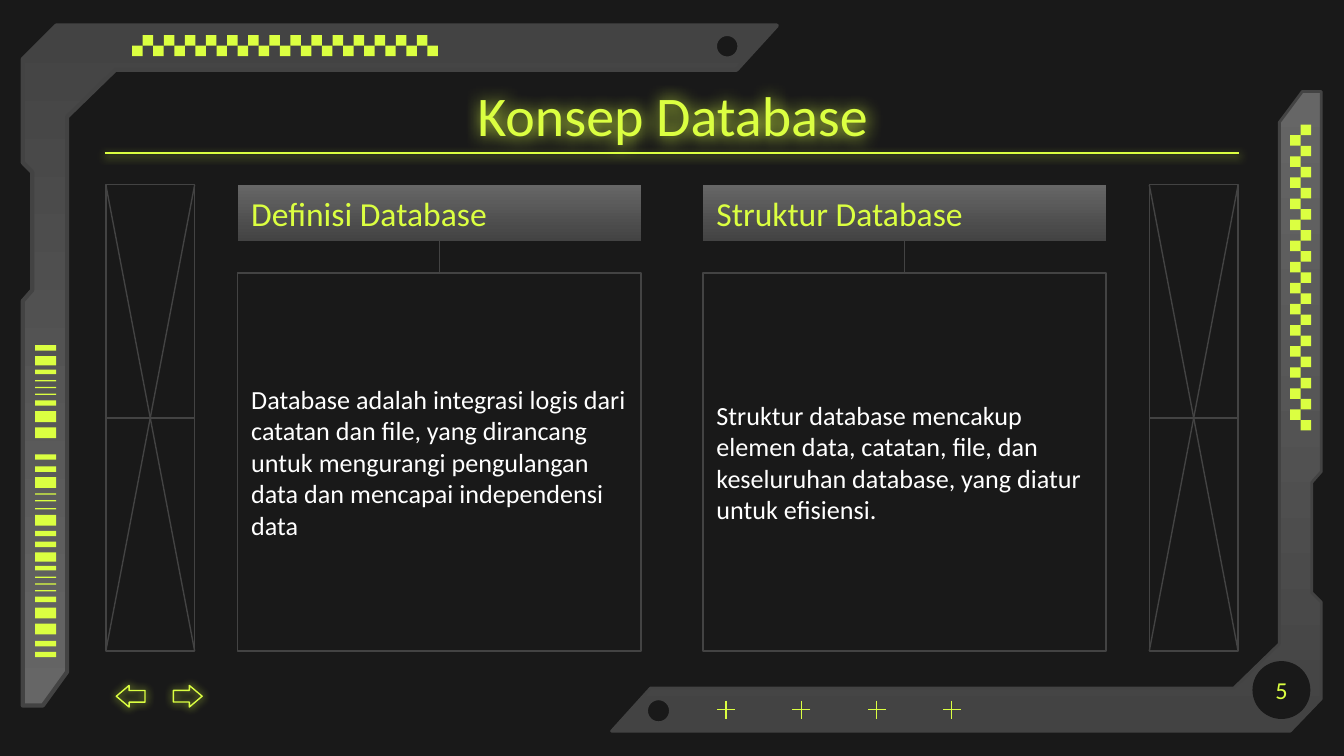
from dataclasses import dataclass

import pptx
import pptx.dml.color
import pptx.enum.shapes
import pptx.enum.text
import pptx.oxml
import pptx.oxml.ns
import pptx.util

Pt = pptx.util.Pt
Kind = pptx.enum.shapes.MSO_SHAPE
Align = pptx.enum.text.PP_ALIGN
Anchor = pptx.enum.text.MSO_ANCHOR

LIME, DARK, GREY, PALE, WHITE = "DBFF41", "191919", "434343", "666666", "FFFFFF"


@dataclass
class Box:
    x: float
    y: float
    w: float
    h: float


@dataclass
class Card:
    x: float
    head: str
    body: str


@dataclass
class Frame:
    points: list
    top: str
    base: str
    line: float
    hole: Box


FRAMES = [
    Frame([(697.7, 49), (685.4, 65.5), (685.4, 344.9), (661, 368.6), (348.5, 368.6),
           (327.6, 391.7), (691.2, 391.7), (707.8, 374.4), (707.8, 322.6),
           (702.7, 317.5), (702.7, 258.5), (707.8, 252.7), (707.8, 49)],
          PALE, GREY, 1.5, Box(346.4, 374.4, 12.8, 12.8)),
    Frame([(23, 378), (36, 360), (36, 62.6), (61.9, 37.4), (394.6, 37.4),
           (416.2, 13.7), (30.2, 13.7), (12.2, 31.7), (12.2, 87.1),
           (17.3, 92.2), (17.3, 155.5), (12.2, 161.3), (12.2, 378)],
          GREY, PALE, 2.25, Box(383, 18.2, 13.2, 13.2)),
]
CARDS = [
    Card(127.4, "Definisi Database",
         "Database adalah integrasi logis dari catatan dan file, yang dirancang "
         "untuk mengurangi pengulangan data dan mencapai independensi data"),
    Card(376.6, "Struktur Database",
         "Struktur database mencakup elemen data, catatan, file, dan keseluruhan "
         "database, yang diatur untuk efisiensi."),
]
# Barcode runs: offset and height of each bar
LONG = [(0, 2.9), (5.8, 5), (13, 2.4), (18.7, 0.7), (22.3, 0.7), (25.9, 0.7),
        (29.5, 2.9), (35.3, 5.8), (43.9, 5.8)]
MID = [(0, 2.9), (6.5, 2.9), (12.2, 5.8), (20.9, 0.7), (24.5, 0.7), (28.8, 0.7),
       (32.4, 5.8), (41, 2.9)]
TAIL = [(0, 2.9), (5.8, 2.9)]
CODES = [(185, LONG), (243.4, MID), (290.2, LONG), (343.4, TAIL)]

deck = pptx.Presentation()
deck.slide_width, deck.slide_height = Pt(720), Pt(405)
slide = deck.slides.add_slide(deck.slide_layouts[4])
shapes = slide.shapes


def tint(code: str):
    return pptx.dml.color.RGBColor.from_string(code)


def paint(shape, fill=None, line=None, width=0.75) -> None:
    """Fill with one colour, or a top and base pair, and set the outline."""
    if isinstance(fill, tuple):
        shape.fill.gradient()
        shape.fill.gradient_angle = 270
        for stop, code, spot in zip(shape.fill.gradient_stops, fill, (0, 1)):
            stop.color.rgb, stop.position = tint(code), spot
    elif fill:
        shape.fill.solid()
        shape.fill.fore_color.rgb = tint(fill)
    else:
        shape.fill.background()
    if line:
        shape.line.color.rgb = tint(line)
        shape.line.width = Pt(width)
    else:
        shape.line.fill.background()


def glow(shape, blur: float = 0, drop: float = 0) -> None:
    """Replace the theme shadow: a lime halo, or none when blur is 0."""
    props = shape._element.spPr
    for old in props.findall(pptx.oxml.ns.qn("a:effectLst")):
        props.remove(old)
    halo = (f'<a:outerShdw blurRad="{Pt(blur)}" dist="{Pt(drop)}" dir="5400000" '
            f'algn="bl" rotWithShape="0"><a:srgbClr val="{LIME}"/></a:outerShdw>')
    props.append(pptx.oxml.parse_xml(
        f'<a:effectLst {pptx.oxml.ns.nsdecls("a")}>{halo if blur else ""}</a:effectLst>'))


def place(shape, box: Box) -> None:
    shape.left, shape.top = Pt(box.x), Pt(box.y)
    shape.width, shape.height = Pt(box.w), Pt(box.h)


def draw(kind, box: Box, fill=None, line=None, width=0.75):
    shape = shapes.add_shape(kind, Pt(box.x), Pt(box.y), Pt(box.w), Pt(box.h))
    shape.shadow.inherit = False
    paint(shape, fill, line, width)
    return shape


def rule(x1: float, y1: float, x2: float, y2: float, color: str = GREY):
    line = shapes.add_connector(pptx.enum.shapes.MSO_CONNECTOR.STRAIGHT,
                                Pt(x1), Pt(y1), Pt(x2), Pt(y2))
    line.line.color.rgb = tint(color)
    line.line.width = Pt(0.75)
    glow(line)
    return line


def join(start, side: int, end, other: int) -> None:
    line = rule(0, 0, 0, 0)
    line.begin_connect(start, side)
    line.end_connect(end, other)


def write(shape, text: str, size=14, color=LIME, align=Align.LEFT, anchor=Anchor.MIDDLE):
    frame = shape.text_frame
    frame.word_wrap = True
    frame.auto_size = pptx.enum.text.MSO_AUTO_SIZE.NONE
    frame.vertical_anchor = anchor
    frame.margin_left = frame.margin_right = Pt(7.2)
    frame.margin_top = frame.margin_bottom = Pt(7.2)
    para = frame.paragraphs[0]
    para.alignment, para.space_before = align, Pt(0)
    props = para._p.get_or_add_pPr()
    props.set("marL", "0")
    props.set("indent", "0")
    props.append(pptx.oxml.parse_xml(f'<a:buNone {pptx.oxml.ns.nsdecls("a")}/>'))
    run = para.add_run()
    run.text = text
    run.font.name, run.font.size, run.font.bold = "Calibri", Pt(size), False
    run.font.color.rgb = tint(color)


# Background and metal frames
slide.background.fill.solid()
slide.background.fill.fore_color.rgb = tint(DARK)
for item in FRAMES:
    spots = [(Pt(x), Pt(y)) for x, y in item.points]
    path = shapes.build_freeform(*spots[0])
    path.add_line_segments(spots[1:], close=True)
    metal = path.convert_to_shape()
    metal.shadow.inherit = False
    paint(metal, (item.top, item.base), GREY, item.line)
    draw(Kind.OVAL, item.hole, DARK, GREY, item.line)

# Checker strips, along the top and down the right
CELL = 5.65
for i in range(29):
    odd = i % 2
    draw(Kind.RECTANGLE, Box(70.8 + i * CELL, 24.5 - odd * CELL, CELL, CELL), LIME)
    draw(Kind.RECTANGLE, Box(696.8 - odd * CELL, 66.8 + i * CELL, CELL, CELL), LIME)

# Plus signs
for i in range(4):
    x, y, arm = 389 + i * 40.3, 380.2, 4.8
    rule(x, y - arm, x, y + arm, LIME)
    rule(x + arm, y, x - arm, y, LIME)

# Barcode
for top, bars in CODES:
    for step, high in bars:
        draw(Kind.RECTANGLE, Box(18.8, top + step, 11.4, high), LIME)

# Title and its underline
place(shapes.title, Box(56.9, 35.8, 607, 45.4))
write(shapes.title, "Konsep Database", size=30, align=Align.CENTER, anchor=Anchor.TOP)
glow(shapes.title, 9)
glow(rule(56.2, 82, 663.8, 82, LIME), 4.5, 1.5)

# Page number
draw(Kind.OVAL, Box(671, 354.2, 31, 31), DARK)
page = shapes.add_textbox(Pt(665), Pt(354.2), Pt(43), Pt(31))
write(page, "5", size=13, align=Align.CENTER)

# Cards: header, body and the link between them
for i, card in enumerate(CARDS):
    head, body = slide.placeholders[2 * i + 1], slide.placeholders[2 * i + 2]
    place(head, Box(card.x, 99, 216, 30.2))
    place(body, Box(card.x, 146.2, 216, 202.5))
    paint(head, (PALE, GREY))
    paint(body, line=GREY)
    write(head, card.head, size=18)
    write(body, card.body, color=WHITE)
    join(body, 0, head, 2)

# Crossed side panels
for x in (56.7, 615.7):
    panel = Box(x, 99, 47.6, 249.8)
    side = draw(Kind.RECTANGLE, panel, line=GREY)
    join(side, 3, side, 1)
    right, low = x + panel.w, panel.y + panel.h
    rule(right, panel.y, x, low)
    rule(right, low, x, panel.y)

# Back and forward arrows
for x, turn in ((92.9, 0), (62.3, 180)):
    arrow = draw(Kind.RIGHT_ARROW, Box(x, 367.2, 15.4, 11.6), line=LIME)
    arrow.adjustments[0], arrow.adjustments[1] = 0.54, 0.59
    arrow.rotation = turn
    glow(arrow, 4.5)

deck.save("out.pptx")
